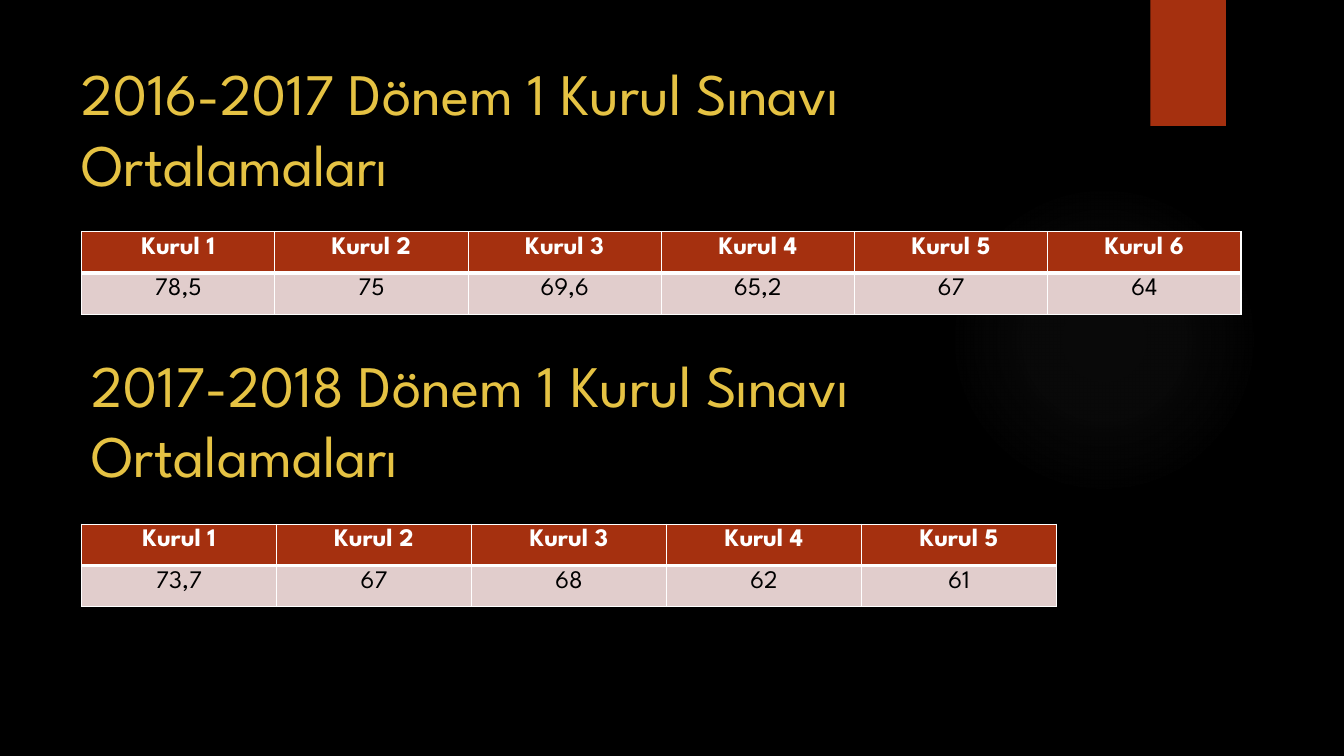
from lxml.etree import SubElement
from pptx import Presentation
from pptx.dml.color import RGBColor
from pptx.enum.shapes import MSO_SHAPE
from pptx.enum.text import MSO_ANCHOR, PP_ALIGN
from pptx.oxml import parse_xml
from pptx.oxml.ns import nsdecls, qn
from pptx.util import Inches, Pt


def color(value):
    return RGBColor.from_string(value)


class ExamSlide:
    font_name = "League Spartan"
    background = "000000"
    gold = "E5C243"
    rust = "A5300F"
    pale = "E1CDCC"
    white = "FFFFFF"
    black = "000000"
    glow_color = "848484"
    heading_size = 42
    cell_size = 18
    row_height = 0.41

    def __init__(self, presentation):
        self.slide = presentation.slides.add_slide(presentation.slide_layouts[5])
        fill = self.slide.background.fill
        fill.solid()
        fill.fore_color.rgb = color(self.background)

    def add_plain_shape(self, kind, left, top, width, height):
        shape = self.slide.shapes.add_shape(
            kind, Inches(left), Inches(top), Inches(width), Inches(height))
        shape.shadow.inherit = False
        shape.line.fill.background()
        shape.fill.solid()
        shape.fill.fore_color.rgb = color(self.rust)
        return shape

    def add_glow(self, left, top, size):
        shape = self.add_plain_shape(MSO_SHAPE.OVAL, left, top, size, size)
        stops = "".join(
            f'<a:gs pos="{position * 1000}"><a:srgbClr val="{self.glow_color}">'
            f'<a:alpha val="{alpha * 1000}"/></a:srgbClr></a:gs>'
            for position, alpha in ((0, 7), (36, 6), (69, 0), (100, 0)))
        gradient = parse_xml(
            f'<a:gradFill {nsdecls("a")} rotWithShape="1"><a:gsLst>{stops}</a:gsLst>'
            '<a:path path="circle"><a:fillToRect l="50000" t="50000" r="50000" b="50000"/>'
            '</a:path></a:gradFill>')
        properties = shape._element.spPr
        properties.replace(properties.find(qn("a:solidFill")), gradient)

    def add_ribbon(self, left, top, width, height):
        self.add_plain_shape(MSO_SHAPE.RECTANGLE, left, top, width, height)

    def style_text(self, paragraph, size, text_color, bold=False):
        for run in paragraph.runs:
            run.font.name = self.font_name
            run.font.size = Pt(size)
            run.font.bold = bold
            run.font.color.rgb = color(text_color)

    def format_heading(self, shape, text):
        text_frame = shape.text_frame
        text_frame.text = text
        text_frame.word_wrap = True
        text_frame.vertical_anchor = MSO_ANCHOR.MIDDLE
        paragraph = text_frame.paragraphs[0]
        paragraph.alignment = PP_ALIGN.LEFT
        self.style_text(paragraph, self.heading_size, self.gold)

    def add_title(self, text, left, top, width, height):
        title = self.slide.shapes.title
        title.left, title.top = Inches(left), Inches(top)
        title.width, title.height = Inches(width), Inches(height)
        self.slide.shapes._spTree.append(title._element)
        self.format_heading(title, text)

    def add_heading(self, text, left, top, width, height):
        box = self.slide.shapes.add_textbox(
            Inches(left), Inches(top), Inches(width), Inches(height))
        self.format_heading(box, text)

    def set_borders(self, cell, top, bottom):
        properties = cell._tc.get_or_add_tcPr()
        sides = (("lnL", 1), ("lnR", 1), ("lnT", top), ("lnB", bottom))
        for index, (side, width) in enumerate(sides):
            line = parse_xml(f'<a:{side} {nsdecls("a")} w="{Pt(width)}"/>')
            fill = SubElement(line, qn("a:solidFill"))
            SubElement(fill, qn("a:srgbClr"), val=self.white)
            properties.insert(index, line)

    def add_score_table(self, scores, left, top, width):
        headers = [f"Kurul {number}" for number in range(1, len(scores) + 1)]
        table = self.slide.shapes.add_table(
            2, len(scores), Inches(left), Inches(top),
            Inches(width), Inches(2 * self.row_height)).table
        rows = (
            (headers, self.rust, self.white, True, 1, 3),
            (scores, self.pale, self.black, False, 3, 1),
        )
        for row, (texts, fill, text_color, bold, above, below) in enumerate(rows):
            table.rows[row].height = Inches(self.row_height)
            for column, text in enumerate(texts):
                cell = table.cell(row, column)
                cell.text_frame.text = text
                cell.fill.solid()
                cell.fill.fore_color.rgb = color(fill)
                paragraph = cell.text_frame.paragraphs[0]
                paragraph.alignment = PP_ALIGN.CENTER
                self.style_text(paragraph, self.cell_size, text_color, bold)
                self.set_borders(cell, above, below)


def main():
    presentation = Presentation()
    presentation.slide_width = Inches(13.33)
    presentation.slide_height = Inches(7.5)

    exam_slide = ExamSlide(presentation)
    exam_slide.add_glow(9.41, 1.83, 3.08)
    exam_slide.add_ribbon(11.41, 0, 0.75, 1.25)
    exam_slide.add_title(
        "2016-2017 Dönem 1 Kurul Sınavı Ortalamaları", 0.71, 0.5, 10.29, 1.53)
    exam_slide.add_score_table(
        ["78,5", "75", "69,6", "65,2", "67", "64"], 0.81, 2.3, 11.5)
    exam_slide.add_heading(
        "2017-2018 Dönem 1 Kurul Sınavı Ortalamaları", 0.81, 3.39, 10.29, 1.53)
    exam_slide.add_score_table(
        ["73,7", "67", "68", "62", "61"], 0.81, 5.2, 9.67)

    presentation.save("out.pptx")


if __name__ == "__main__":
    main()
